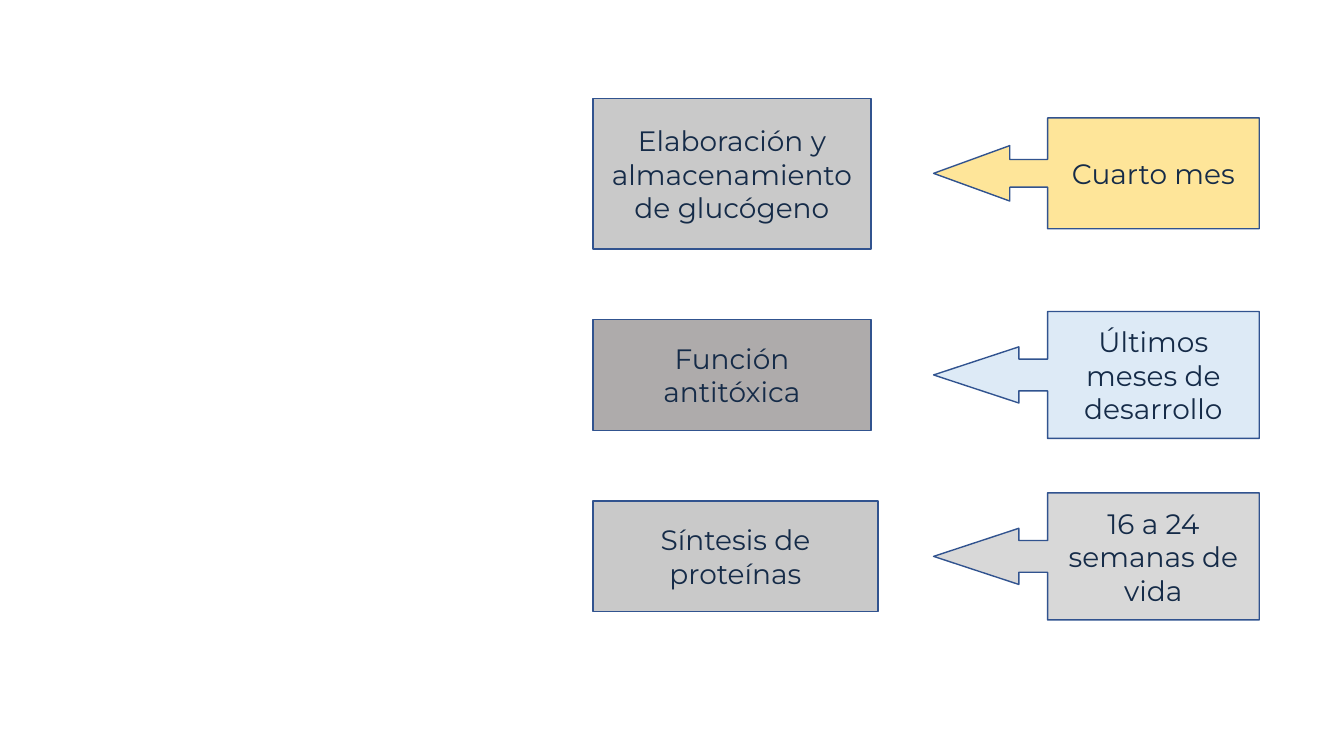
from dataclasses import dataclass

from pptx import Presentation
from pptx.dml.color import RGBColor
from pptx.enum.shapes import MSO_SHAPE
from pptx.enum.text import MSO_ANCHOR, PP_ALIGN
from pptx.util import Emu, Pt

EMU_PER_PX = 9144  # 100 px to the inch
BLANK_LAYOUT = 6


@dataclass(frozen=True)
class Theme:
    font: str = "Montserrat"
    text_size: int = 20
    line_width: int = 1
    text: str = "152B48"
    outline: str = "31538F"
    silver: str = "C9C9C9"
    gray: str = "AEABAB"
    yellow: str = "FEE599"
    blue: str = "DDEAF6"
    light_gray: str = "D8D8D8"


def px(length):
    return Emu(length * EMU_PER_PX)


def write_text(shape, text, *, font, size, color, align=PP_ALIGN.CENTER):
    frame = shape.text_frame
    frame.word_wrap = True
    frame.vertical_anchor = MSO_ANCHOR.MIDDLE
    paragraph = frame.paragraphs[0]
    paragraph.alignment = align
    run = paragraph.add_run()
    run.text = text
    run.font.name = font
    run.font.size = Pt(size)
    run.font.color.rgb = RGBColor.from_string(color)


class SlideBuilder:
    def __init__(self, slide, theme):
        self.slide = slide
        self.theme = theme

    def box(self, text, left, middle, width, height, fill, kind=MSO_SHAPE.RECTANGLE):
        """Add a labelled shape centred vertically on middle."""
        theme = self.theme
        shape = self.slide.shapes.add_shape(
            kind, px(left), px(middle - height // 2), px(width), px(height)
        )
        shape.shadow.inherit = False
        shape.fill.solid()
        shape.fill.fore_color.rgb = RGBColor.from_string(fill)
        shape.line.color.rgb = RGBColor.from_string(theme.outline)
        shape.line.width = Pt(theme.line_width)
        write_text(shape, text, font=theme.font, size=theme.text_size, color=theme.text)
        return shape

    def left_callout(self, text, left, middle, width, height, fill, head):
        """Add a callout whose arrow has the (half width, length) given in head."""
        shape = self.box(
            text, left, middle, width, height, fill, MSO_SHAPE.LEFT_ARROW_CALLOUT
        )
        for index, value in enumerate((0.25, *head, 0.65)):
            shape.adjustments[index] = value


def main():
    presentation = Presentation()
    presentation.slide_width = px(1333)
    presentation.slide_height = px(750)
    slide = presentation.slides.add_slide(presentation.slide_layouts[BLANK_LAYOUT])
    theme = Theme()
    builder = SlideBuilder(slide, theme)

    short_head, long_head = (0.25, 0.687), (0.221, 0.671)
    # middle, (function, width, height, fill), (period, height, fill, arrowhead)
    rows = [
        (172, ("Elaboración y almacenamiento de glucógeno", 276, 149, theme.silver),
         ("Cuarto mes", 110, theme.yellow, short_head)),
        (372, ("Función antitóxica", 276, 110, theme.gray),
         ("Últimos meses de desarrollo", 126, theme.blue, long_head)),
        (552, ("Síntesis de proteínas", 283, 110, theme.silver),
         ("16 a 24 semanas de vida", 126, theme.light_gray, long_head)),
    ]
    for middle, (function, width, height, fill), period_style in rows:
        builder.box(function, 588, middle, width, height, fill)
        period, period_height, period_fill, head = period_style
        builder.left_callout(period, 926, middle, 323, period_height, period_fill, head)

    presentation.save("out.pptx")


if __name__ == "__main__":
    main()
